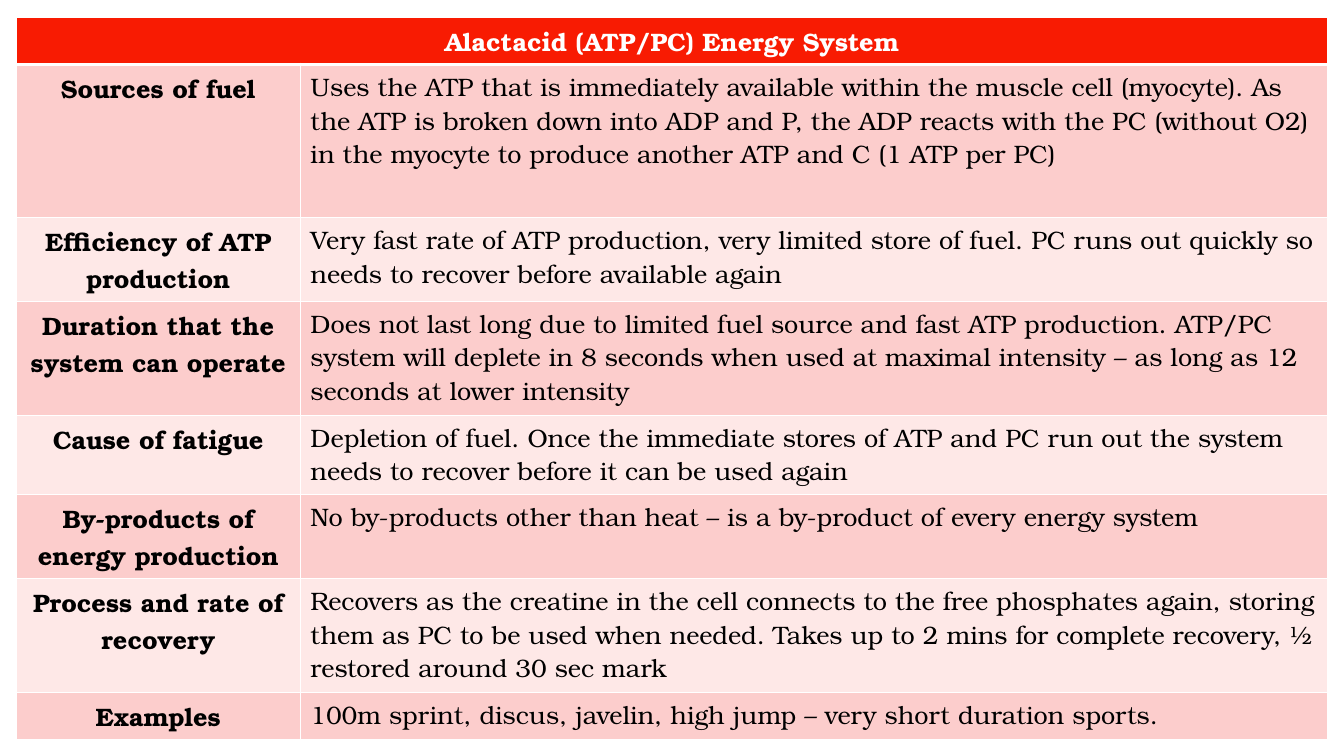
from lxml import etree
from pptx import Presentation
from pptx.dml.color import RGBColor
from pptx.enum.text import PP_ALIGN
from pptx.oxml.ns import qn
from pptx.util import Inches, Pt

CENTER, LEFT = PP_ALIGN.CENTER, PP_ALIGN.LEFT
FONT = "TeX Gyre Bonum"
COLORS = {"header": "F81B02", "dark_band": "FCCDCC", "light_band": "FEE8E7",
          "rule": "FFFFFF", "header_text": "FFFFFF", "text": "000000"}

# Table grid, in inches
LEFT_EDGE, TOP_EDGE = 0.16, 0.17
COLUMNS = [2.82, 10.19]
ROWS = [0.47, 1.52, 0.82, 1.13, 0.79, 0.79, 1.13, 0.47]

HEADING = "Alactacid (ATP/PC) Energy System"
FACTS = [
    ("Sources of fuel",
     "Uses the ATP that is immediately available within the muscle cell (myocyte). "
     "As the ATP is broken down into ADP and P, the ADP reacts with the PC "
     "(without O2) in the myocyte to produce another ATP and C (1 ATP per PC)"),
    ("Efficiency of ATP production",
     "Very fast rate of ATP production, very limited store of fuel. "
     "PC runs out quickly so needs to recover before available again"),
    ("Duration that the system can operate",
     "Does not last long due to limited fuel source and fast ATP production. "
     "ATP/PC system will deplete in 8 seconds when used at maximal intensity "
     "– as long as 12 seconds at lower intensity"),
    ("Cause of fatigue",
     "Depletion of fuel. Once the immediate stores of ATP and PC run out "
     "the system needs to recover before it can be used again"),
    ("By-products of energy production",
     "No by-products other than heat – is a by-product of every energy system"),
    ("Process and rate of recovery",
     "Recovers as the creatine in the cell connects to the free phosphates again, "
     "storing them as PC to be used when needed. Takes up to 2 mins for complete "
     "recovery, ½ restored around 30 sec mark"),
    ("Examples",
     "100m sprint, discus, javelin, high jump – very short duration sports."),
]


def write_text(cell, text, color="text", bold=False, align=LEFT, size=18):
    paragraph = cell.text_frame.paragraphs[0]
    paragraph.alignment = align
    run = paragraph.add_run()
    run.text = text
    run.font.name = FONT
    run.font.size = Pt(size)
    run.font.bold = bold
    run.font.color.rgb = RGBColor.from_string(COLORS[color])


def paint_cell(cell, color, top=1, bottom=1):
    """Draw the four borders, then the fill that must follow them."""
    properties = cell._tc.get_or_add_tcPr()
    for side, width in (("L", 1), ("R", 1), ("T", top), ("B", bottom)):
        line = etree.SubElement(properties, qn(f"a:ln{side}"), w=str(Pt(width)))
        fill = etree.SubElement(line, qn("a:solidFill"))
        etree.SubElement(fill, qn("a:srgbClr"), val=COLORS["rule"])
    cell.fill.solid()
    cell.fill.fore_color.rgb = RGBColor.from_string(COLORS[color])


def add_grid(slide):
    frame = slide.shapes.add_table(
        len(ROWS), len(COLUMNS), Inches(LEFT_EDGE), Inches(TOP_EDGE),
        Inches(sum(COLUMNS)), Inches(sum(ROWS)))
    grid = frame.table
    for column, width in zip(grid.columns, COLUMNS):
        column.width = Inches(width)
    for row, height in zip(grid.rows, ROWS):
        row.height = Inches(height)
    return grid


def fill_header(grid):
    for cell in grid.rows[0].cells:
        paint_cell(cell, "header", bottom=3)
    header = grid.cell(0, 0)
    header.merge(grid.cell(0, 1))
    write_text(header, HEADING, color="header_text", bold=True, align=CENTER)


def fill_facts(grid):
    for row, (label, detail) in enumerate(FACTS, start=1):
        label_cell, detail_cell = grid.cell(row, 0), grid.cell(row, 1)
        for cell in (label_cell, detail_cell):
            paint_cell(cell, "dark_band" if row % 2 else "light_band",
                       top=3 if row == 1 else 1)
        write_text(label_cell, label, bold=True, align=CENTER)
        write_text(detail_cell, detail)


def main():
    prs = Presentation()
    prs.slide_width, prs.slide_height = Inches(13.33), Inches(7.5)
    slide = prs.slides.add_slide(prs.slide_layouts[6])

    # Energy system table
    grid = add_grid(slide)
    fill_header(grid)
    fill_facts(grid)

    prs.save("out.pptx")


if __name__ == "__main__":
    main()
